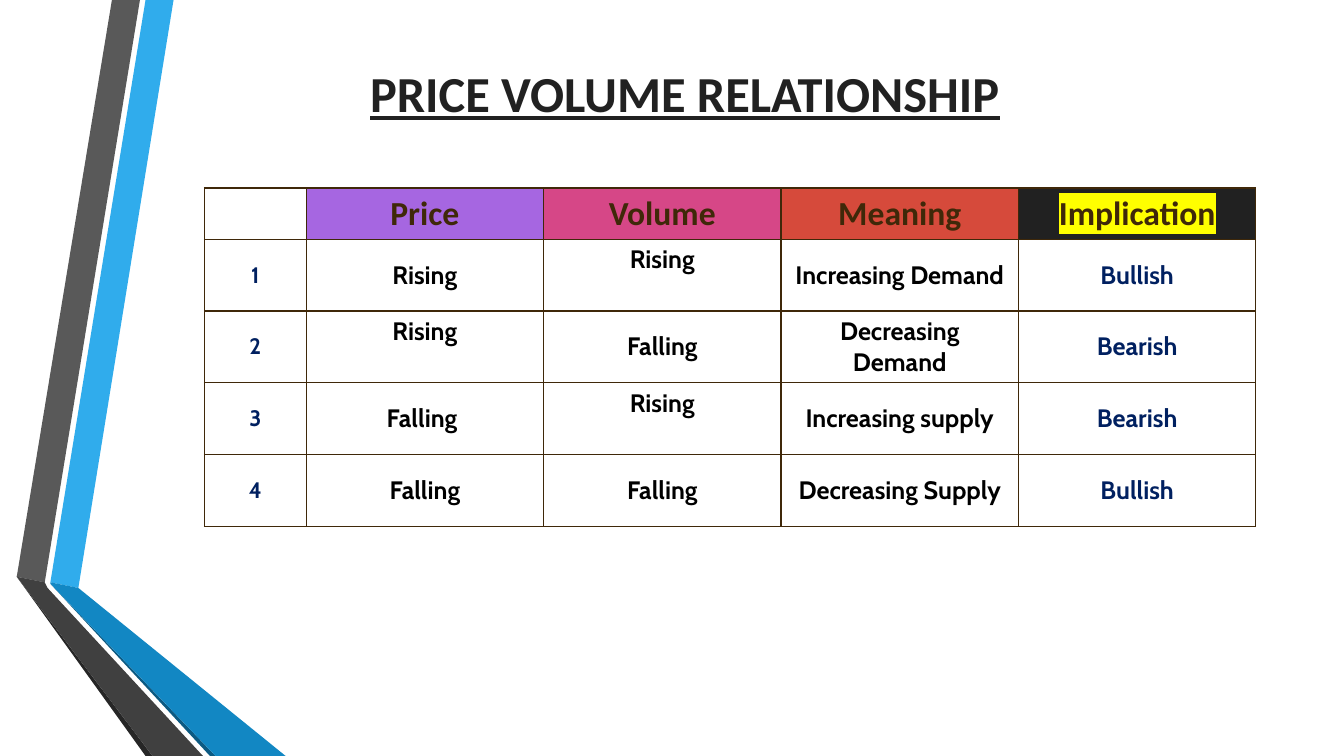
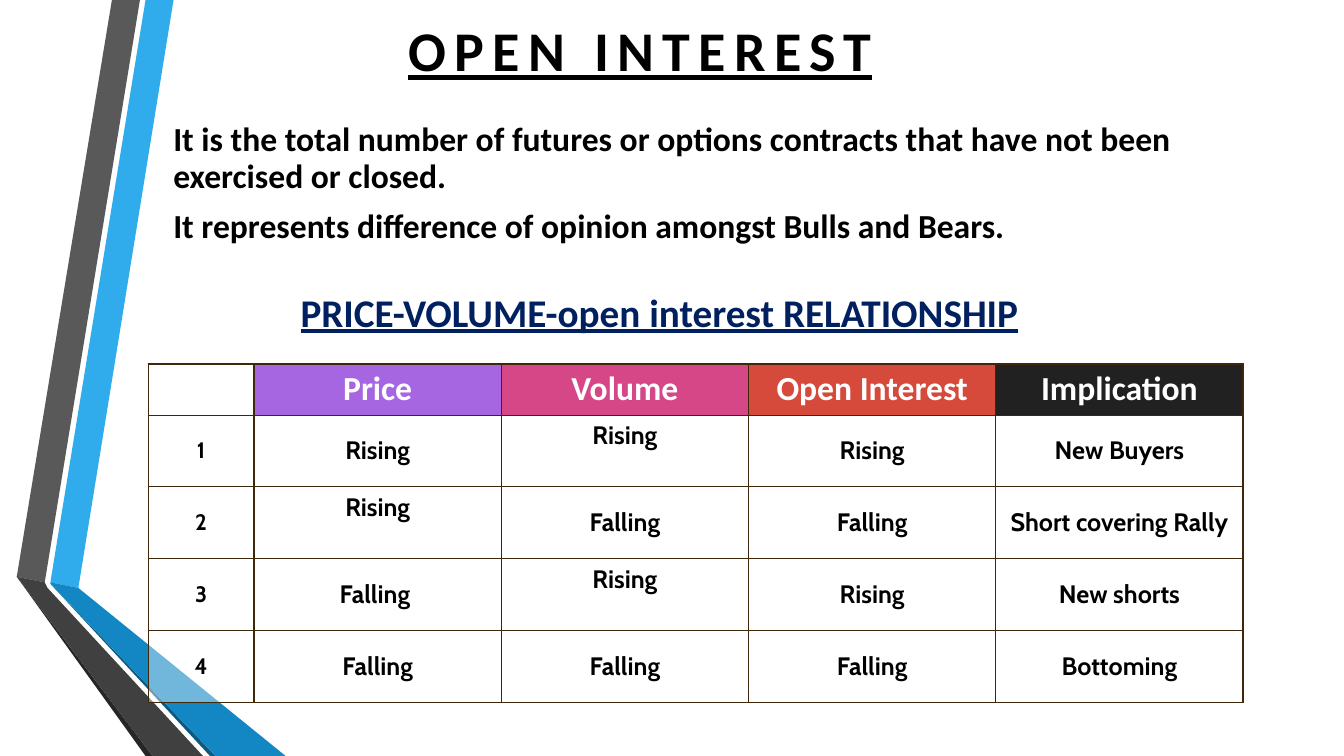
from dataclasses import dataclass
from typing import Any, NamedTuple

from lxml import etree
from pptx import Presentation
from pptx import util as u
from pptx.dml import color as dml
from pptx.enum import text as t
from pptx.oxml import ns


# Theme: colours, fonts and type sizes
@dataclass(frozen=True)
class Theme:
    heading_font: str = "Calibri"
    cell_font: str = "Cabin"
    black: str = "000000"
    white: str = "FFFFFF"
    charcoal: str = "212121"
    brown: str = "3F2809"
    navy: str = "002060"
    yellow: str = "FFFF00"
    column_fills: tuple[str, ...] = ("A666E1", "D64787", "D64A3B", "212121")
    title_size: float = 36
    wide_title_size: float = 40
    subtitle_size: float = 28
    body_size: float = 24
    cell_size: float = 18
    number_size: float = 16


THEME = Theme()


class Box(NamedTuple):
    left: float
    top: float
    width: float
    height: float


class Band(NamedTuple):
    color: str
    points: tuple[tuple[float, float], ...]


class TextStyle(NamedTuple):
    size: float
    color: str
    font: str = THEME.heading_font
    underline: bool = False
    highlight: str = ""
    tracking: float = 0


@dataclass(frozen=True)
class Grid:
    left: float
    top: float
    number_width: float
    column_width: float
    header_color: str
    accent: str
    headers: tuple[str, ...]
    rows: tuple[tuple[str, ...], ...]
    highlighted: str = ""


HEADER_HEIGHT = 36.5
ROW_HEIGHT = 51.3
BLANK_OPACITY, ODD_OPACITY, EVEN_OPACITY = 40, 30, 40
# Body cells, as (row, column), whose text sits at the top
RAISED_CELLS = {(1, 2), (2, 1), (3, 2)}

BANDS = (
    Band("30ACEC", ((36, 416), (55.5, 420), (124.5, 0), (104.5, 0))),
    Band("595959", ((100, 0), (80, 0), (11.5, 412.5), (31.5, 415.5))),
    Band("262626", ((11.5, 412.5), (104.5, 540), (108.7, 540))),
    Band("0C5A82", ((36, 417), (149.8, 540), (154, 540))),
    Band("1287C3", ((36, 416), (36, 417), (154, 540), (203.8, 540), (55.5, 420))),
    Band("404040", ((145.4, 540), (34.5, 420), (31.5, 415.5), (11.5, 412.5), (108.7, 540))),
)

VOLUME_GRID = Grid(
    left=146, top=134.3, number_width=72.7, column_width=169.6,
    header_color=THEME.brown, accent=THEME.navy, highlighted="Implication",
    headers=("Price", "Volume", "Meaning", "Implication"),
    rows=(
        ("Rising", "Rising", "Increasing Demand", "Bullish"),
        ("Rising", "Falling", "Decreasing Demand", "Bearish"),
        ("Falling ", "Rising", "Increasing supply", "Bearish"),
        ("Falling", "Falling", "Decreasing Supply", "Bullish"),
    ),
)
INTEREST_GRID = Grid(
    left=105.8, top=260, number_width=75.7, column_width=176.6,
    header_color=THEME.white, accent=THEME.black,
    headers=("Price", "Volume", "Open Interest", "Implication"),
    rows=(
        ("Rising", "Rising", "Rising", "New Buyers"),
        ("Rising", "Falling", "Falling", "Short covering Rally"),
        ("Falling ", "Rising", "Rising", "New shorts"),
        ("Falling", "Falling", "Falling", "Bottoming"),
    ),
)


# Formatting helpers
def rgb(value: str) -> dml.RGBColor:
    return dml.RGBColor.from_string(value)


def apply(target: Any, values: dict[str, Any]) -> None:
    for name, value in values.items():
        setattr(target, name, value)


def write(paragraph: Any, content: str, style: TextStyle, **layout: Any) -> None:
    """Fill a paragraph with one bold run."""
    apply(paragraph, layout)
    run = paragraph.add_run()
    run.text = content
    apply(run.font, {
        "name": style.font,
        "size": u.Pt(style.size),
        "bold": True,
        "underline": style.underline,
    })
    run.font.color.rgb = rgb(style.color)
    properties = run._r.get_or_add_rPr()
    if style.tracking:
        properties.set("spc", str(int(style.tracking * 100)))
    if style.highlight:
        mark = etree.Element(ns.qn("a:highlight"))
        etree.SubElement(mark, ns.qn("a:srgbClr"), val=style.highlight)
        properties.find(ns.qn("a:latin")).addprevious(mark)


def place(shape: Any, box: Box, anchor: t.MSO_ANCHOR) -> Any:
    """Position a text shape and return its frame."""
    apply(shape, {name: u.Pt(value) for name, value in box._asdict().items()})
    apply(shape.text_frame, {
        "word_wrap": True,
        "auto_size": t.MSO_AUTO_SIZE.NONE,
        "vertical_anchor": anchor,
    })
    return shape.text_frame


def remove_bullet(paragraph: Any) -> None:
    properties = paragraph._p.get_or_add_pPr()
    apply_to = {"marL": "0", "indent": "0"}
    for name, value in apply_to.items():
        properties.set(name, value)
    etree.SubElement(properties, ns.qn("a:buNone"))


# Shared bands on the slide master
def add_bands(slide: Any, master: Any) -> None:
    """Build the bands, then hand them to the master, behind its placeholders."""
    for index, band in enumerate(BANDS):
        start, *others = band.points
        builder = slide.shapes.build_freeform(*start, scale=float(u.Pt(1)))
        builder.add_line_segments(others, close=True)
        shape = builder.convert_to_shape()
        shape.name = f"Band {index + 1}"
        shape.shadow.inherit = False
        shape.fill.solid()
        shape.fill.fore_color.rgb = rgb(band.color)
        shape.line.fill.background()
        shape.element.nvSpPr.cNvPr.set("id", str(100 + index))
        master.shapes.element.insert(2 + index, shape.element)


# Tables
def fill_cell(cell: Any, color: str, opacity: int = 100) -> None:
    cell.fill.solid()
    cell.fill.fore_color.rgb = rgb(color)
    properties = cell._tc.get_or_add_tcPr()
    if opacity < 100:
        value = properties.find(".//" + ns.qn("a:srgbClr"))
        etree.SubElement(value, ns.qn("a:alpha"), val=str(opacity * 1000))
    for index, side in enumerate(("a:lnL", "a:lnR", "a:lnT", "a:lnB")):
        line = etree.Element(ns.qn(side), w=str(u.Pt(1)))
        solid = etree.SubElement(line, ns.qn("a:solidFill"))
        etree.SubElement(solid, ns.qn("a:srgbClr"), val=THEME.brown)
        properties.insert(index, line)


def write_cell(cell: Any, content: str, style: TextStyle, raised: bool = False) -> None:
    cell.vertical_anchor = t.MSO_ANCHOR.TOP if raised else t.MSO_ANCHOR.MIDDLE
    write(cell.text_frame.paragraphs[0], content, style, alignment=t.PP_ALIGN.CENTER)


def add_grid(slide: Any, grid: Grid) -> None:
    row_count, column_count = len(grid.rows) + 1, len(grid.headers) + 1
    widths = [grid.number_width] + [grid.column_width] * len(grid.headers)
    heights = [HEADER_HEIGHT] + [ROW_HEIGHT] * len(grid.rows)
    table = slide.shapes.add_table(
        row_count, column_count, u.Pt(grid.left), u.Pt(grid.top),
        u.Pt(sum(widths)), u.Pt(sum(heights)),
    ).table
    apply(table, {"first_row": False, "horz_banding": False})
    for column, width in zip(table.columns, widths):
        column.width = u.Pt(width)
    for row, height in zip(table.rows, heights):
        row.height = u.Pt(height)

    # Header row
    fill_cell(table.cell(0, 0), THEME.white, BLANK_OPACITY)
    for column, (header, color) in enumerate(zip(grid.headers, THEME.column_fills), 1):
        highlight = THEME.yellow if header == grid.highlighted else ""
        style = TextStyle(THEME.body_size, grid.header_color, highlight=highlight)
        fill_cell(table.cell(0, column), color)
        write_cell(table.cell(0, column), header, style)

    # Numbered rows
    number = TextStyle(THEME.number_size, grid.accent, THEME.cell_font)
    plain = TextStyle(THEME.cell_size, THEME.black, THEME.cell_font)
    implication = plain._replace(color=grid.accent)
    styles = [number, *[plain] * (column_count - 2), implication]
    for row, values in enumerate(grid.rows, 1):
        opacity = ODD_OPACITY if row % 2 else EVEN_OPACITY
        for column, (value, style) in enumerate(zip((str(row), *values), styles)):
            cell = table.cell(row, column)
            fill_cell(cell, THEME.white, opacity)
            write_cell(cell, value, style, (row, column) in RAISED_CELLS)


# Slides
def add_volume_slide(presentation: Any) -> Any:
    slide = presentation.slides.add_slide(presentation.slide_layouts.get_by_name("Title Only"))
    frame = place(slide.shapes.title, Box(222.5, 24.5, 533.5, 83.5), t.MSO_ANCHOR.MIDDLE)
    write(frame.paragraphs[0], "PRICE VOLUME RELATIONSHIP",
          TextStyle(THEME.title_size, THEME.charcoal, underline=True),
          alignment=t.PP_ALIGN.CENTER)
    add_grid(slide, VOLUME_GRID)
    return slide


def add_interest_slide(presentation: Any) -> None:
    layout = presentation.slide_layouts.get_by_name("Title and Content")
    slide = presentation.slides.add_slide(layout)

    # Title
    frame = place(slide.shapes.title, Box(284.4, 7.2, 373, 56.2), t.MSO_ANCHOR.BOTTOM)
    write(frame.paragraphs[0], "OPEN INTEREST",
          TextStyle(THEME.wide_title_size, THEME.black, underline=True, tracking=6),
          alignment=t.PP_ALIGN.LEFT, line_spacing=0.9)

    # Definition
    frame = place(slide.placeholders[1], Box(116.6, 84.2, 789, 113), t.MSO_ANCHOR.TOP)
    statements = (
        "It is the total number of futures or options contracts that have not been "
        "exercised or closed.",
        "It represents difference of opinion amongst Bulls and Bears.",
    )
    for index, statement in enumerate(statements):
        paragraph = frame.add_paragraph() if index else frame.paragraphs[0]
        write(paragraph, statement, TextStyle(THEME.body_size, THEME.black),
              line_spacing=0.9, space_before=u.Pt(10))
        remove_bullet(paragraph)

    # Table with its heading
    heading = slide.shapes.add_textbox(0, 0, 0, 0)
    frame = place(heading, Box(165.6, 197.3, 610.6, 50.4), t.MSO_ANCHOR.MIDDLE)
    write(frame.paragraphs[0], "PRICE-VOLUME-open interest RELATIONSHIP",
          TextStyle(THEME.subtitle_size, THEME.navy, underline=True),
          alignment=t.PP_ALIGN.CENTER)
    add_grid(slide, INTEREST_GRID)


def main() -> None:
    presentation = Presentation()
    apply(presentation, {"slide_width": u.Pt(960), "slide_height": u.Pt(540)})
    first_slide = add_volume_slide(presentation)
    add_bands(first_slide, presentation.slide_master)
    add_interest_slide(presentation)
    presentation.save("out.pptx")


if __name__ == "__main__":
    main()
